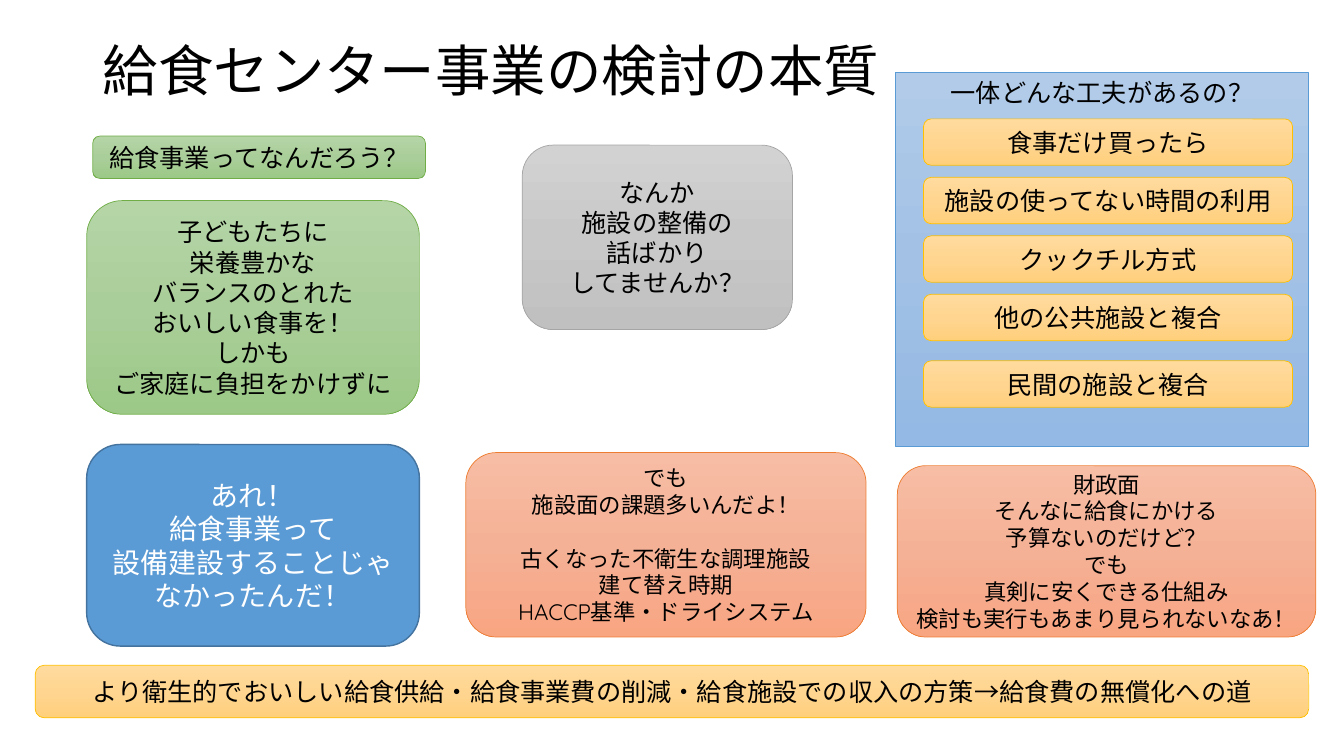
from copy import deepcopy

from lxml.etree import SubElement
from pptx import Presentation
from pptx.dml.color import RGBColor
from pptx.enum.shapes import MSO_SHAPE as SHAPE
from pptx.enum.text import MSO_ANCHOR as ANCHOR, PP_ALIGN as ALIGN
from pptx.oxml.ns import qn
from pptx.util import Pt

PX = 9144  # 100 px to the inch

BLACK = RGBColor(0x00, 0x00, 0x00)
WHITE = RGBColor(0xFF, 0xFF, 0xFF)
BLUE = RGBColor(0x5B, 0x9B, 0xD5)
DARK_BLUE = RGBColor(0x43, 0x73, 0x9E)

# Three gradient colours from top to bottom, then the outline
YELLOW_STYLE = (RGBColor(0xFF, 0xDB, 0x9E), RGBColor(0xFF, 0xD5, 0x90),
                RGBColor(0xFF, 0xD0, 0x7C), RGBColor(0xFF, 0xC0, 0x00))
ORANGE_STYLE = (RGBColor(0xF7, 0xBD, 0xA5), RGBColor(0xF5, 0xB1, 0x96),
                RGBColor(0xF8, 0xA5, 0x82), RGBColor(0xED, 0x7D, 0x31))
GREEN_STYLE = (RGBColor(0xB5, 0xD5, 0xA7), RGBColor(0xAA, 0xCE, 0x9A),
               RGBColor(0x9C, 0xC9, 0x87), RGBColor(0x70, 0xAD, 0x47))
GREY_STYLE = (RGBColor(0xD2, 0xD2, 0xD2), RGBColor(0xC8, 0xC8, 0xC8),
              RGBColor(0xC0, 0xC0, 0xC0), RGBColor(0xA5, 0xA5, 0xA5))
BLUE_STYLE = (RGBColor(0xB1, 0xCB, 0xE9), RGBColor(0xA3, 0xC1, 0xE5),
              RGBColor(0x93, 0xB9, 0xE4), BLUE)

TITLE_FONT = "Noto Sans CJK JP"
BODY_FONT = "Quicksand"


def to_emu(box):
    return [length * PX for length in box]


def write_text(shape, lines, size=18, font=BODY_FONT, color=BLACK,
               align=ALIGN.CENTER, anchor=ANCHOR.MIDDLE, spacing=None, gaps=None):
    """Write one paragraph per line; gaps maps a line number to points before it."""
    frame = shape.text_frame
    frame.word_wrap = True
    frame.vertical_anchor = anchor
    for number, line in enumerate(lines):
        paragraph = frame.add_paragraph() if number else frame.paragraphs[0]
        paragraph.alignment = align
        if spacing:
            paragraph.line_spacing = spacing
        if gaps and number in gaps:
            paragraph.space_before = Pt(gaps[number])
        run = paragraph.add_run()
        run.text = line
        run.font.size = Pt(size)
        run.font.name = font
        run.font.color.rgb = color
        SubElement(run.font._element, qn("a:ea"), typeface=font)


def fill_gradient(shape, colors):
    fill = shape.fill
    fill.gradient()
    fill.gradient_angle = 270
    stop_list = shape._element.spPr.find(qn("a:gradFill")).find(qn("a:gsLst"))
    stop_list.insert(1, deepcopy(stop_list[0]))
    for stop, color, position in zip(fill.gradient_stops, colors, (0, 0.5, 1)):
        stop.color.rgb = color
        stop.position = position


def add_card(slide, box, lines, style, kind=SHAPE.ROUNDED_RECTANGLE, **text_format):
    *colors, outline = style
    shape = slide.shapes.add_shape(kind, *to_emu(box))
    shape.shadow.inherit = False
    if len(colors) == 1:
        shape.fill.solid()
        shape.fill.fore_color.rgb = colors[0]
    else:
        fill_gradient(shape, colors)
    shape.line.color.rgb = outline
    shape.line.width = Pt(1 if len(colors) == 1 else 0.5)
    write_text(shape, lines, **text_format)


def add_title(slide, box):
    shape = slide.shapes.add_textbox(*to_emu(box))
    write_text(shape, ["給食センター事業の検討の本質"], size=39.6, font=TITLE_FONT,
               align=ALIGN.LEFT, spacing=0.9)


def add_purpose_column(slide, box):
    left, top, width, height = box
    add_card(slide, (left + 6, top, width, 42), ["給食事業ってなんだろう？"], GREEN_STYLE)
    add_card(slide, (left, top + 64, width, 212),
             ["子どもたちに", "栄養豊かな", "バランスのとれた", "おいしい食事を！",
              "しかも", "ご家庭に負担をかけずに"], GREEN_STYLE)
    add_card(slide, (left, top + height - 200, width, 200),
             ["あれ！", "給食事業って", "設備建設することじゃ", "なかったんだ！"],
             (BLUE, DARK_BLUE), size=20, color=WHITE)


def add_facility_column(slide, box):
    left, top, width, height = box
    add_card(slide, (left + 56, top, 268, 183),
             ["なんか", "施設の整備の", "話ばかり", "してませんか？"], GREY_STYLE)
    add_card(slide, (left, top + height - 183, width, 183),
             ["でも", "施設面の課題多いんだよ！", "古くなった不衛生な調理施設",
              "建て替え時期", "HACCP基準・ドライシステム"],
             ORANGE_STYLE, size=16, gaps={2: 19})


def add_idea_panel(slide, box):
    left, top, width, height = box
    add_card(slide, box, ["一体どんな工夫があるの？"], BLUE_STYLE,
             kind=SHAPE.RECTANGLE, anchor=ANCHOR.TOP)
    ideas = ["食事だけ買ったら", "施設の使ってない時間の利用", "クックチル方式",
             "他の公共施設と複合", "民間の施設と複合"]
    for row, idea in enumerate(ideas):
        # The last idea stands a little apart
        extra = 8 if row == len(ideas) - 1 else 0
        add_card(slide, (left + 28, top + 46 + row * 58 + extra, width - 44, 46),
                 [idea], YELLOW_STYLE)


def add_budget_card(slide, box):
    add_card(slide, box,
             ["財政面", "そんなに給食にかける", "予算ないのだけど？", "でも",
              "真剣に安くできる仕組み", "検討も実行もあまり見られないなあ！"],
             ORANGE_STYLE, size=16)


def add_conclusion(slide, box):
    add_card(slide, box,
             ["より衛生的でおいしい給食供給・給食事業費の削減・給食施設での収入の方策→給食費の無償化への道"],
             YELLOW_STYLE)


def main():
    presentation = Presentation()
    presentation.slide_width = 1333 * PX
    presentation.slide_height = 750 * PX
    slide = presentation.slides.add_slide(presentation.slide_layouts[6])
    add_title(slide, (92, 40, 1150, 65))
    add_purpose_column(slide, (86, 135, 330, 506))
    add_facility_column(slide, (462, 144, 397, 488))
    add_idea_panel(slide, (888, 72, 410, 371))
    add_budget_card(slide, (890, 462, 415, 170))
    add_conclusion(slide, (35, 660, 1263, 52))
    presentation.save("out.pptx")


if __name__ == "__main__":
    main()
